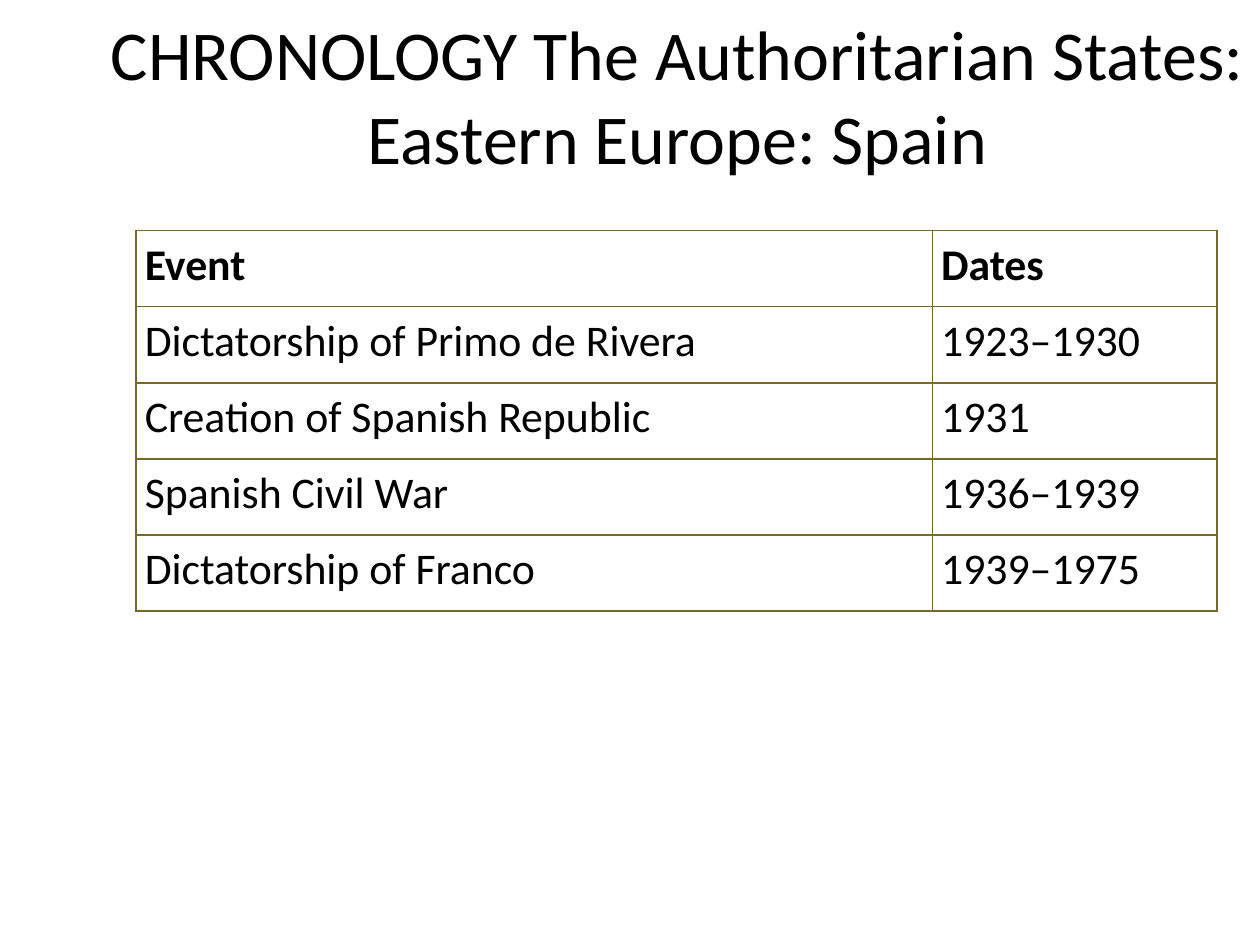
from lxml import etree
from pptx import Presentation
from pptx.dml.color import RGBColor
from pptx.enum.text import MSO_ANCHOR, PP_ALIGN
from pptx.oxml.ns import qn
from pptx.util import Inches, Pt

CENTER = PP_ALIGN.CENTER
MIDDLE, TOP = MSO_ANCHOR.MIDDLE, MSO_ANCHOR.TOP
BLACK = RGBColor(0x00, 0x00, 0x00)
OLIVE = RGBColor(0x74, 0x68, 0x33)
FONT = "Calibri"
TITLE = "CHRONOLOGY The Authoritarian States: Eastern Europe: Spain"
ROWS = [
    ("Event", "Dates"),
    ("Dictatorship of Primo de Rivera", "1923–1930"),
    ("Creation of Spanish Republic", "1931"),
    ("Spanish Civil War", "1936–1939"),
    ("Dictatorship of Franco", "1939–1975"),
]
COL_WIDTHS = (6.32, 2.26)


def add_run(p, text, size, bold=False):
    """Add one formatted run to a paragraph."""
    r = p.add_run()
    r.text = text
    r.font.name = FONT
    r.font.size = Pt(size)
    r.font.bold = bold
    r.font.color.rgb = BLACK


def set_borders(cell, color, width):
    """Draw a solid line on all four sides of a cell."""
    tc_pr = cell._tc.get_or_add_tcPr()
    for i, side in enumerate(("lnL", "lnR", "lnT", "lnB")):
        ln = etree.Element(qn(f"a:{side}"), w=str(Pt(width)))
        fill = etree.SubElement(ln, qn("a:solidFill"))
        etree.SubElement(fill, qn("a:srgbClr"), val=str(color))
        tc_pr.insert(i, ln)


def place_title(s, left, top, width, height):
    """Move and fill the title placeholder."""
    sp = s.shapes.title
    sp.left, sp.top = Inches(left), Inches(top)
    sp.width, sp.height = Inches(width), Inches(height)
    tf = sp.text_frame
    tf.word_wrap = True
    tf.vertical_anchor = MIDDLE
    p = tf.paragraphs[0]
    p.alignment = CENTER
    add_run(p, TITLE, 40)


def fill_cell(cell, text, bold):
    """Write and format one table cell."""
    cell.fill.background()
    set_borders(cell, OLIVE, 1)
    cell.margin_left = cell.margin_right = Inches(0.07)
    cell.margin_top = cell.margin_bottom = 0
    cell.vertical_anchor = TOP
    p = cell.text_frame.paragraphs[0]
    p.line_spacing = 1.15
    add_run(p, text, 25, bold)


def add_chronology(s, left, top, width, height):
    """Add the table of events and dates."""
    table = s.shapes.add_table(len(ROWS), len(COL_WIDTHS), Inches(left),
                               Inches(top), Inches(width), Inches(height)).table
    table.horz_banding = False
    for col, col_width in zip(table.columns, COL_WIDTHS):
        col.width = Inches(col_width)
    for i, row in enumerate(ROWS):
        for j, text in enumerate(row):
            fill_cell(table.cell(i, j), text, bold=i == 0)


def main():
    """Build and save the slide."""
    prs = Presentation()
    prs.slide_width, prs.slide_height = Inches(10), Inches(7.5)
    s = prs.slides.add_slide(prs.slide_layouts[5])
    place_title(s, 0.75, 0.5, 9.25, 0.5)
    add_chronology(s, 1.08, 1.83, sum(COL_WIDTHS), 3.02)
    prs.save("out.pptx")


if __name__ == "__main__":
    main()
